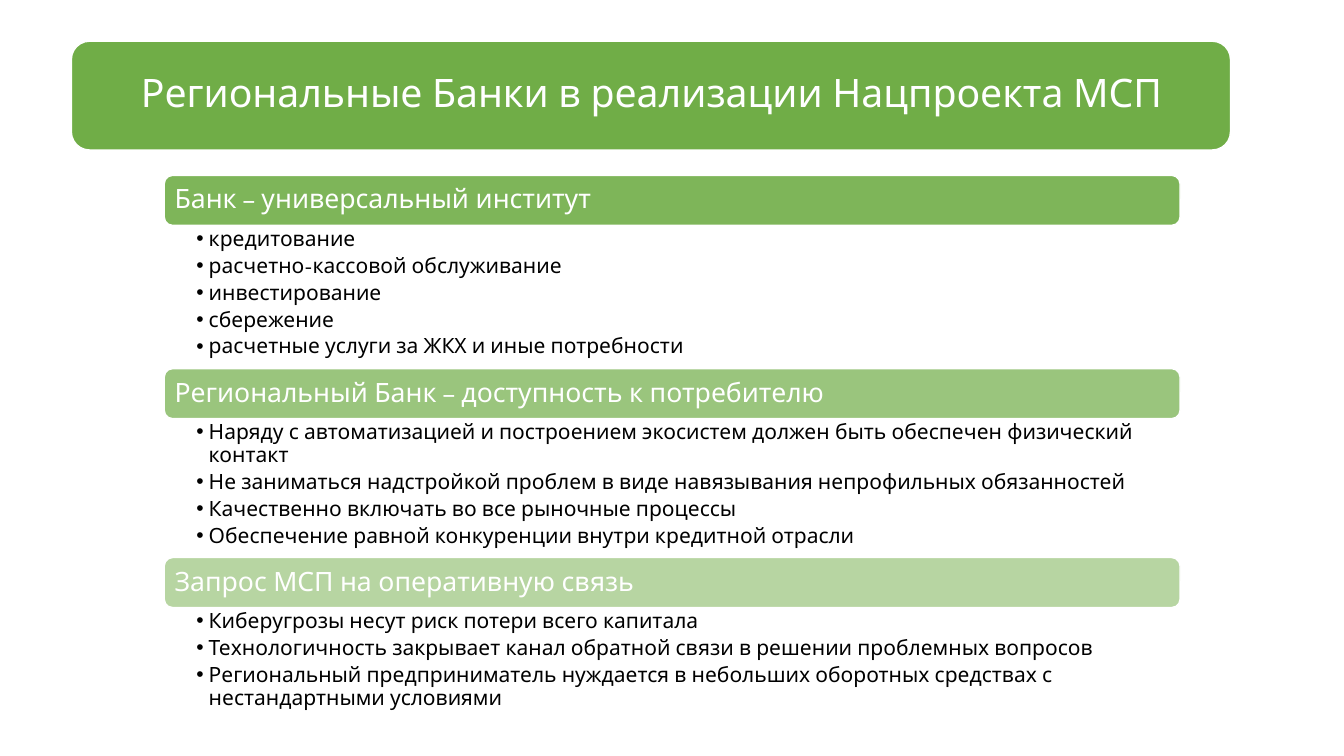
import pptx
import pptx.util
import pptx.dml.color
import pptx.enum.shapes
import pptx.enum.text
import pptx.oxml
import pptx.oxml.ns
from pptx.util import Cm

COLOURS = {"green": "70AD47", "white": "FFFFFF", "black": "000000"}
FONT = "League Spartan"
LEFT, WIDTH, BAR_HEIGHT, FIRST_TOP = 4.14, 25.6, 1.26, 4.42
TITLE = "Региональные Банки в реализации Нацпроекта МСП"
SECTIONS = [
    ("Банк – универсальный институт", 90, 3.61, [
        "кредитование",
        "расчетно-кассовой обслуживание",
        "инвестирование",
        "сбережение",
        "расчетные услуги за ЖКХ и иные потребности",
    ]),
    ("Региональный Банк – доступность к потребителю", 70, 3.5, [
        "Наряду с автоматизацией и построением экосистем должен быть обеспечен физический контакт",
        "Не заниматься надстройкой проблем в виде навязывания непрофильных обязанностей",
        "Качественно включать во все рыночные процессы",
        "Обеспечение равной конкуренции внутри кредитной отрасли",
    ]),
    ("Запрос МСП на оперативную связь", 50, 2.74, [
        "Киберугрозы несут риск потери всего капитала",
        "Технологичность закрывает канал обратной связи в решении проблемных вопросов",
        "Региональный предприниматель нуждается в небольших оборотных средствах с нестандартными условиями",
    ]),
]


class SlideBuilder:
    """Holds the style and the current slide and adds each kind of element."""

    def __init__(self, deck):
        self.page = deck.slides.add_slide(deck.slide_layouts.get_by_name("Comparison"))
        self.bodies = [holder for holder in self.page.placeholders
                       if holder.placeholder_format.idx in (1, 2, 3, 4)]

    def colour(self, name):
        return pptx.dml.color.RGBColor.from_string(COLOURS[name])

    def place(self, shape, left, top, width, height):
        shape.left, shape.top = Cm(left), Cm(top)
        shape.width, shape.height = Cm(width), Cm(height)

    def style(self, shape, size, colour, insets, anchor="MIDDLE", align="LEFT", after=0):
        frame = shape.text_frame
        frame.word_wrap = True
        frame.auto_size = pptx.enum.text.MSO_AUTO_SIZE.NONE
        frame.vertical_anchor = pptx.enum.text.MSO_ANCHOR[anchor]
        frame.margin_left, frame.margin_top, frame.margin_right, frame.margin_bottom = map(Cm, insets)
        for para in frame.paragraphs:
            para.alignment = pptx.enum.text.PP_ALIGN[align]
            para.line_spacing = 0.9
            para.space_before = pptx.util.Pt(0)
            para.space_after = pptx.util.Pt(after)
            for span in para.runs:
                span.font.name = FONT
                span.font.size = pptx.util.Pt(size)
                span.font.bold = False
                span.font.color.rgb = self.colour(colour)

    def bar(self, left, top, width, height, opacity=100):
        box = self.page.shapes.add_shape(
            pptx.enum.shapes.MSO_SHAPE.ROUNDED_RECTANGLE, Cm(left), Cm(top), Cm(width), Cm(height))
        box.shadow.inherit = False
        box.fill.solid()
        box.fill.fore_color.rgb = self.colour("green")
        box.line.color.rgb = self.colour("white")
        box.line.width = pptx.util.Pt(1)
        if opacity < 100:
            fill = box.element.spPr.find(pptx.oxml.ns.qn("a:solidFill"))
            alpha = pptx.oxml.parse_xml(
                f'<a:alpha {pptx.oxml.ns.nsdecls("a")} val="{opacity * 1000}"/>')
            fill[0].append(alpha)
        return box

    def title(self, text):
        box = self.bar(1.8, 1.04, 29.21, 2.74)
        title = self.page.shapes.title
        self.place(title, 1.94, 1.17, 28.96, 2.46)
        title.text_frame.text = text
        self.style(title, 28, "white", [0.43] * 4, align="CENTER")
        box.element.addnext(title.element)

    def heading(self, text, top, opacity):
        box = self.bar(LEFT, top, WIDTH, BAR_HEIGHT, opacity)
        box.text_frame.text = text
        self.style(box, 19, "white", [0.2] * 4)

    def bullets(self, lines, top, height):
        body = self.bodies.pop(0)
        self.place(body, LEFT, top, WIDTH, height)
        body.text_frame.text = "\n".join(lines)
        self.style(body, 15, "black", (0.81, 0.07, 0.38, 0.07), "TOP", after=3)
        for para in body.text_frame.paragraphs:
            para.level = 1
            props = para._p.get_or_add_pPr()
            props.set("marL", str(Cm(0.31)))
            props.set("indent", str(Cm(-0.31)))
            for mark in ('buFont {} typeface="Arial"', 'buChar {} char="•"'):
                props.append(pptx.oxml.parse_xml(
                    f'<a:{mark.format(pptx.oxml.ns.nsdecls("a"))}/>'))

    def drop_empty(self):
        for holder in list(self.page.placeholders):
            if not holder.text_frame.text:
                holder.element.getparent().remove(holder.element)


def main():
    deck = pptx.Presentation()
    deck.slide_width, deck.slide_height = Cm(33.87), Cm(19.05)
    builder = SlideBuilder(deck)
    builder.title(TITLE)
    top = FIRST_TOP
    for heading, opacity, height, lines in SECTIONS:
        builder.heading(heading, top, opacity)
        builder.bullets(lines, top + BAR_HEIGHT, height)
        top += BAR_HEIGHT + height
    builder.drop_empty()
    deck.save("out.pptx")


if __name__ == "__main__":
    main()
